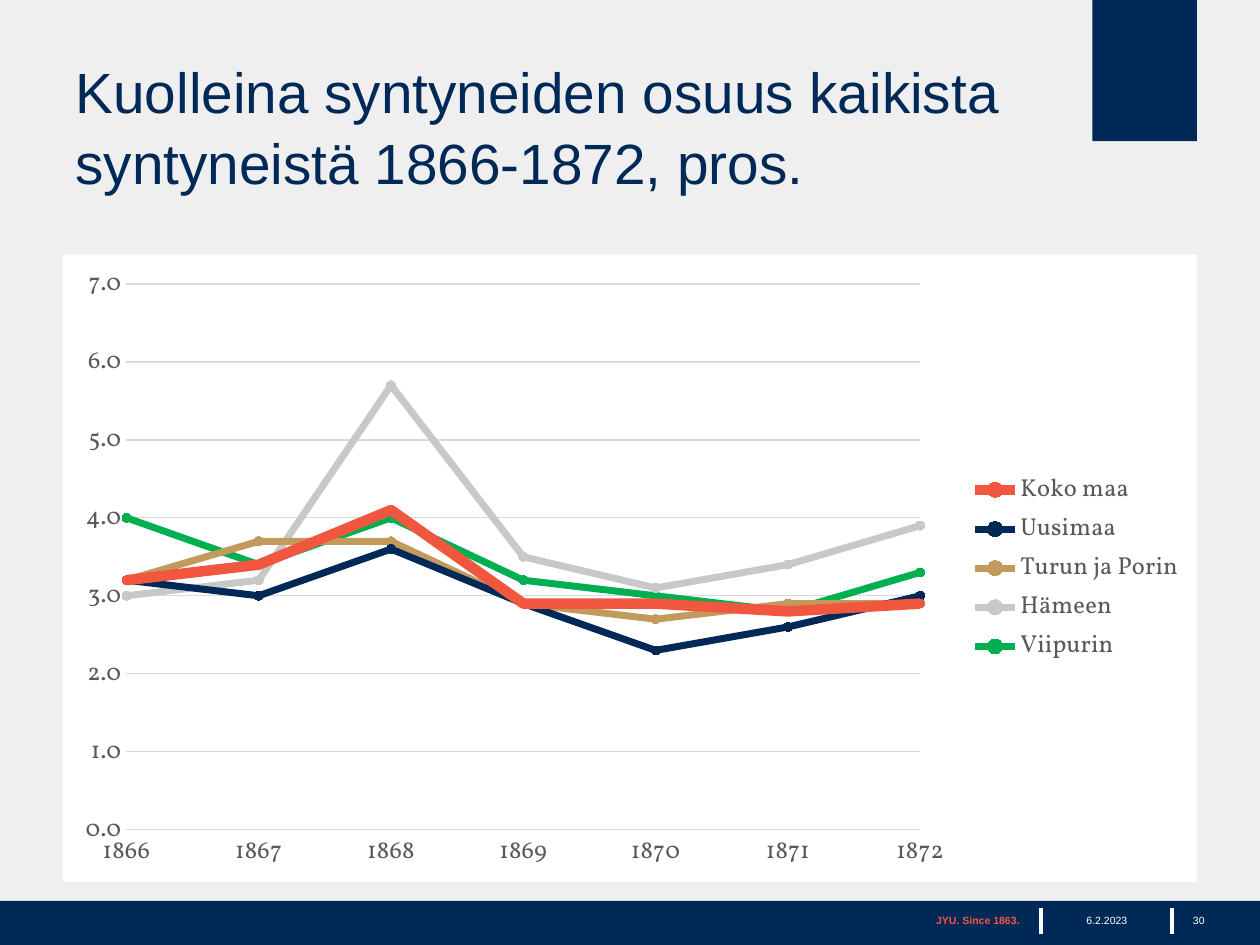
from lxml.etree import SubElement
from pptx import Presentation
from pptx.chart.data import XyChartData
from pptx.dml.color import RGBColor
from pptx.enum.chart import XL_CHART_TYPE, XL_LEGEND_POSITION, XL_MARKER_STYLE, XL_TICK_MARK
from pptx.enum.shapes import MSO_CONNECTOR, MSO_SHAPE
from pptx.enum.text import MSO_ANCHOR, PP_ALIGN
from pptx.oxml import parse_xml
from pptx.oxml.ns import nsdecls, qn
from pptx.util import Inches, Pt

COLORS = {
    "navy": "002957", "red": "F1563F", "gold": "C29A5B", "silver": "C7C9C8",
    "green": "00B050", "background": "EEEFEE", "white": "FFFFFF",
    "grid": "D9D9D9", "label": "595959",
}
TITLE = "Kuolleina syntyneiden osuus kaikista syntyneistä 1866-1872, pros."
YEARS = range(1866, 1873)
SERIES = [  # name, percentages by year, colour, line width
    ("Koko maa", (3.2, 3.4, 4.1, 2.9, 2.9, 2.8, 2.9), "red", 6),
    ("Uusimaa", (3.2, 3.0, 3.6, 2.9, 2.3, 2.6, 3.0), "navy", 4),
    ("Turun ja Porin", (3.2, 3.7, 3.7, 2.9, 2.7, 2.9, 2.9), "gold", 4),
    ("Hämeen", (3.0, 3.2, 5.7, 3.5, 3.1, 3.4, 3.9), "silver", 4),
    ("Viipurin", (4.0, 3.4, 4.0, 3.2, 3.0, 2.8, 3.3), "green", 4),
]
FOOTER = [  # text, left, width, alignment, colour, bold
    ("JYU. Since 1863.", 5.84, 2.35, PP_ALIGN.RIGHT, "red", True),
    ("6.2.2023", 8.33, 0.91, PP_ALIGN.CENTER, "white", False),
    ("30", 9.37, 0.5, PP_ALIGN.LEFT, "white", False),
]
SEPARATORS = (8.26, 9.3)
FOOTER_TOP, FOOTER_HEIGHT = 7.21, 0.2
PLOT_SHARES = {"x": 0.056, "y": 0.047, "w": 0.7, "h": 0.87}


def rgb(name):
    return RGBColor.from_string(COLORS[name])


def write(frame, text, size, color, bold=False, align=PP_ALIGN.LEFT, spacing=1.0):
    frame.word_wrap = True
    frame.vertical_anchor = MSO_ANCHOR.MIDDLE
    frame.margin_left = frame.margin_right = Inches(0.1)
    paragraph = frame.paragraphs[0]
    paragraph.alignment, paragraph.line_spacing = align, spacing
    run = paragraph.add_run()
    run.text = text
    run.font.name, run.font.size, run.font.bold = "Arial", Pt(size), bold
    run.font.color.rgb = rgb(color)


def add_block(slide, *box):
    shape = slide.shapes.add_shape(MSO_SHAPE.RECTANGLE, *map(Inches, box))
    shape.shadow.inherit = False
    shape.fill.solid()
    shape.fill.fore_color.rgb = rgb("navy")
    shape.line.fill.background()


def add_separator(slide, x):
    connector = slide.shapes.add_connector(
        MSO_CONNECTOR.STRAIGHT, Inches(x), Inches(FOOTER_TOP),
        Inches(x), Inches(FOOTER_TOP + FOOTER_HEIGHT))
    connector.line.color.rgb = rgb("white")
    connector.line.width = Pt(2)
    SubElement(connector.element.spPr, qn("a:effectLst"))


def style_font(font, size, color):
    font.name, font.size = "Vollkorn", Pt(size)
    font.color.rgb = rgb(color)


def style_axis(axis, low, high, number_format):
    axis.minimum_scale, axis.maximum_scale, axis.major_unit = low, high, 1
    axis.major_tick_mark = axis.minor_tick_mark = XL_TICK_MARK.NONE
    axis.tick_labels.number_format = number_format
    axis.tick_labels.number_format_is_linked = False
    style_font(axis.tick_labels.font, 14, "label")


def add_stillbirth_chart(slide):
    data = XyChartData()
    for name, values, _, _ in SERIES:
        series = data.add_series(name)
        for year, value in zip(YEARS, values):
            series.add_data_point(year, value)
    chart = slide.shapes.add_chart(
        XL_CHART_TYPE.XY_SCATTER_SMOOTH, Inches(0.5), Inches(2.02),
        Inches(9), Inches(4.98), data).chart
    chart.has_title = False
    style_font(chart.font, 10, "label")

    # Axes and legend
    years, percent = chart.category_axis, chart.value_axis
    style_axis(years, YEARS[0], YEARS[-1], "0")
    style_axis(percent, 0, 7, "0.0")
    years.has_major_gridlines = False
    percent.has_major_gridlines = True
    percent.format.line.fill.background()
    for line in (years.format.line, percent.major_gridlines.format.line):
        line.color.rgb = rgb("grid")
        line.width = Pt(0.75)
    chart.has_legend = True
    chart.legend.position = XL_LEGEND_POSITION.RIGHT
    chart.legend.include_in_layout = False
    style_font(chart.legend.font, 14, "label")

    # Series
    chart.plots[0].vary_by_categories = False
    for series, (_, _, color, width) in zip(chart.plots[0].series, SERIES):
        series.smooth = True
        series.format.line.color.rgb = rgb(color)
        series.format.line.width = Pt(width)
        series.marker.style, series.marker.size = XL_MARKER_STYLE.CIRCLE, 5
        series.marker.format.fill.solid()
        series.marker.format.fill.fore_color.rgb = rgb(color)
        series.marker.format.line.color.rgb = rgb(color)

    # White chart area and fixed plot area
    chart_space = chart.element
    chart_space.find(qn("c:chart")).addnext(parse_xml(
        f'<c:spPr {nsdecls("c", "a")}><a:solidFill><a:srgbClr val="{COLORS["white"]}"/>'
        '</a:solidFill><a:ln><a:noFill/></a:ln></c:spPr>'))
    plot_area = chart_space.find(".//" + qn("c:plotArea"))
    for layout in plot_area.findall(qn("c:layout")):
        plot_area.remove(layout)
    shares = "".join(f'<c:{key} val="{share}"/>' for key, share in PLOT_SHARES.items())
    plot_area.insert(0, parse_xml(
        f'<c:layout {nsdecls("c")}><c:manualLayout><c:layoutTarget val="inner"/>'
        f'<c:xMode val="edge"/><c:yMode val="edge"/>{shares}</c:manualLayout></c:layout>'))


def main():
    presentation = Presentation()
    presentation.slide_width, presentation.slide_height = Inches(10), Inches(7.5)
    slide = presentation.slides.add_slide(presentation.slide_layouts[5])
    slide.background.fill.solid()
    slide.background.fill.fore_color.rgb = rgb("background")

    # Corner block and footer
    add_block(slide, 8.67, 0, 0.83, 1.12)
    add_block(slide, 0, 7.15, 10, 0.35)
    for x in SEPARATORS:
        add_separator(slide, x)
    for text, left, width, align, color, bold in FOOTER:
        box = slide.shapes.add_textbox(Inches(left), Inches(FOOTER_TOP),
                                       Inches(width), Inches(FOOTER_HEIGHT))
        write(box.text_frame, text, 6, color, bold=bold, align=align, spacing=0.9)

    # Title, lifted by one line within its box
    title = slide.shapes.title
    title.left, title.top = Inches(0.5), Inches(0.7)
    title.width, title.height = Inches(8.06), Inches(1.12)
    title.text_frame.margin_top, title.text_frame.margin_bottom = 0, Inches(0.54)
    write(title.text_frame, TITLE, 32.4, "navy", spacing=1.04)

    add_stillbirth_chart(slide)
    presentation.save("out.pptx")


if __name__ == "__main__":
    main()
